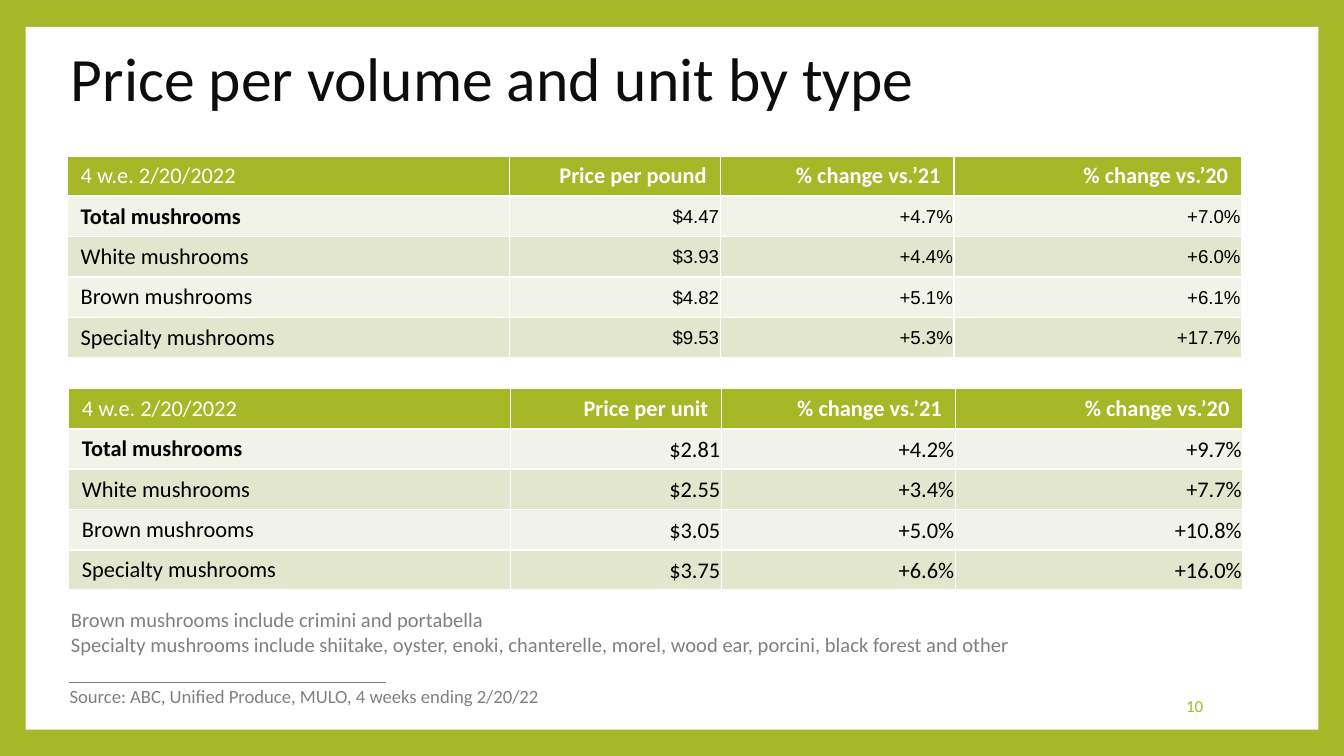
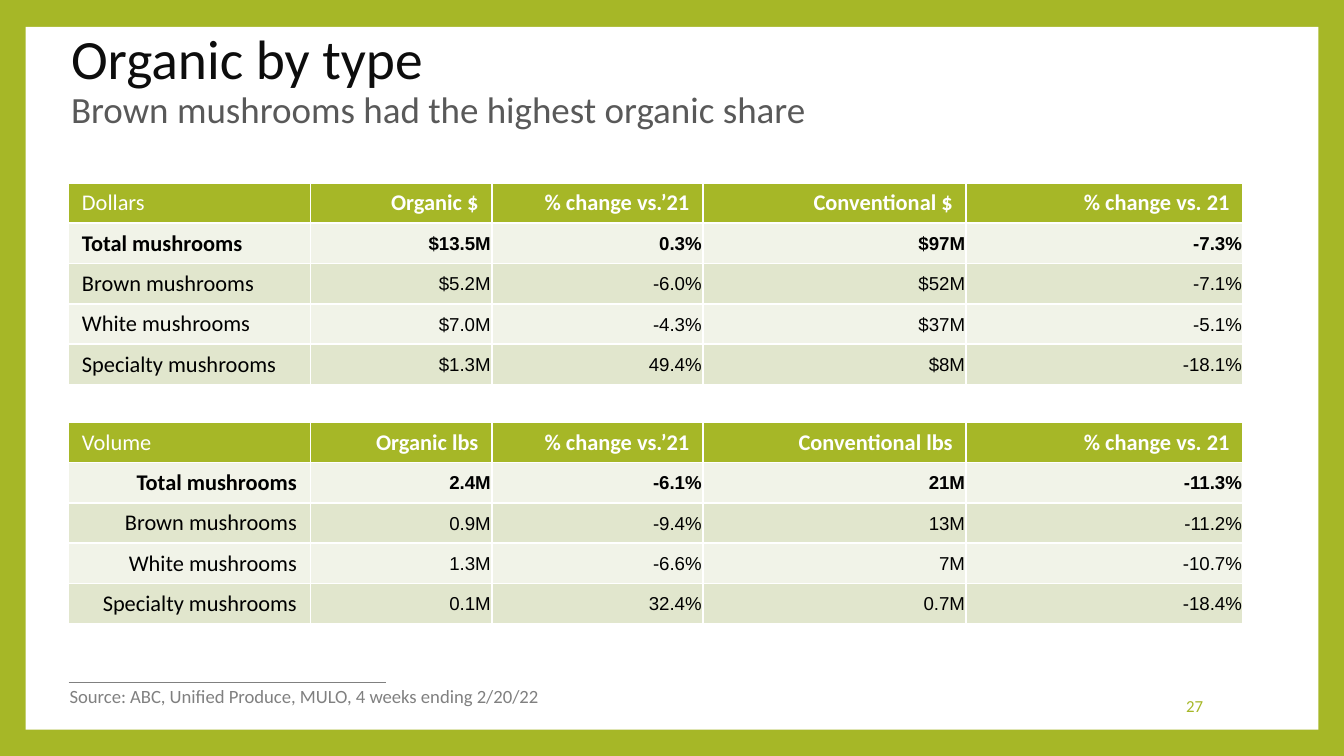
from lxml import etree
from pptx import Presentation
from pptx.dml.color import RGBColor
from pptx.enum.shapes import MSO_CONNECTOR as Connector, MSO_SHAPE as Shape
from pptx.enum.text import MSO_ANCHOR as Anchor, PP_ALIGN as Align
from pptx.oxml import parse_xml
from pptx.oxml.ns import nsdecls, qn
from pptx.util import Inches, Pt

GREEN, WHITE, GRAY, BLACK = "A6B727", "FFFFFF", "808080", "000000"
BANDS = ["F1F3E8", "E1E6CD"]
ROW_HEIGHT = 0.3
SOURCE = "Source: ABC, Unified Produce, MULO, 4 weeks ending 2/20/22"
TIGHT = {"margin_left": Inches(0.01), "margin_right": Inches(0.01),
         "margin_top": Inches(0.01), "margin_bottom": 0}


def rgb(color):
    return RGBColor.from_string(color)


def add_span(para, text, size, color, name="Calibri", bold=False):
    span = para.add_run()
    span.text = text
    for key, value in {"size": Pt(size), "name": name, "bold": bold}.items():
        setattr(span.font, key, value)
    span.font.color.rgb = rgb(color)


price_columns = [3.29, 1.57, 1.74, 2.14]
organic_columns = [1.8, 1.35, 1.57, 1.96, 2.06]

slides = [
    {
        "number": "10",
        "title": [("Price per volume and unit by type", 33, "0D0D0D")],
        "title_width": 8.53,
        "notes": ["Brown mushrooms include crimini and portabella",
                  "Specialty mushrooms include shiitake, oyster, enoki, chanterelle, "
                  "morel, wood ear, porcini, black forest and other"],
        "tables": [
            {"left": 0.5, "top": 1.16, "columns": price_columns, "values": ("Arial", 10),
             "bold_total": False, "labels": Align.LEFT, "rows": [
                ["4 w.e. 2/20/2022", "Price per pound", "% change vs.’21", "% change vs.’20"],
                ["Total mushrooms", "$4.47", "+4.7%", "+7.0%"],
                ["White mushrooms", "$3.93", "+4.4%", "+6.0%"],
                ["Brown mushrooms", "$4.82", "+5.1%", "+6.1%"],
                ["Specialty mushrooms", "$9.53", "+5.3%", "+17.7%"]]},
            {"left": 0.51, "top": 2.89, "columns": price_columns, "values": ("Calibri", 12),
             "bold_total": False, "labels": Align.LEFT, "rows": [
                ["4 w.e. 2/20/2022", "Price per unit", "% change vs.’21", "% change vs.’20"],
                ["Total mushrooms", "$2.81", "+4.2%", "+9.7%"],
                ["White mushrooms", "$2.55", "+3.4%", "+7.7%"],
                ["Brown mushrooms", "$3.05", "+5.0%", "+10.8%"],
                ["Specialty mushrooms", "$3.75", "+6.6%", "+16.0%"]]},
        ],
    },
    {
        "number": "27",
        "title": [("Organic by type", 29.7, "0D0D0D"),
                  ("Brown mushrooms had the highest organic share", 19.8, "595959")],
        "title_width": 9.45,
        "notes": [],
        "tables": [
            {"left": 0.51, "top": 1.36, "columns": organic_columns, "values": ("Arial", 10),
             "bold_total": True, "labels": Align.LEFT, "rows": [
                ["Dollars", "Organic $", "% change vs.’21", "Conventional $", "% change vs. 21"],
                ["Total mushrooms", "$13.5M", "0.3%", "$97M", "-7.3%"],
                ["Brown mushrooms", "$5.2M", "-6.0%", "$52M", "-7.1%"],
                ["White mushrooms", "$7.0M", "-4.3%", "$37M", "-5.1%"],
                ["Specialty mushrooms", "$1.3M", "49.4%", "$8M", "-18.1%"]]},
            {"left": 0.51, "top": 3.14, "columns": organic_columns, "values": ("Arial", 10),
             "bold_total": True, "labels": Align.RIGHT, "rows": [
                ["Volume", "Organic lbs", "% change vs.’21", "Conventional lbs", "% change vs. 21"],
                ["Total mushrooms", "2.4M", "-6.1%", "21M", "-11.3%"],
                ["Brown mushrooms", "0.9M", "-9.4%", "13M", "-11.2%"],
                ["White mushrooms", "1.3M", "-6.6%", "7M", "-10.7%"],
                ["Specialty mushrooms", "0.1M", "32.4%", "0.7M", "-18.4%"]]},
        ],
    },
]

deck = Presentation()
deck.slide_width = Inches(10)
deck.slide_height = deck.slide_width * 9 // 16

for content in slides:
    page = deck.slides.add_slide(deck.slide_layouts[6])
    page.background.fill.solid()
    page.background.fill.fore_color.rgb = rgb(GREEN)

    panel = page.shapes.add_shape(Shape.RECTANGLE, Inches(0.19), Inches(0.2),
                                  Inches(9.62), Inches(5.23))
    panel.shadow.inherit = False
    panel.fill.solid()
    panel.fill.fore_color.rgb = rgb(WHITE)
    panel.line.fill.background()

    rule = page.shapes.add_connector(Connector.STRAIGHT, Inches(0.51), Inches(5.08),
                                     Inches(2.87), Inches(5.08))
    rule.line.color.rgb = rgb(GRAY)
    rule.line.width = Pt(0.79)
    etree.SubElement(rule._element.spPr, qn("a:effectLst"))

    title_place = (0.43, 0.21, content["title_width"], 0.79)
    notes = [[(note, 11, GRAY)] for note in content["notes"]]
    text_boxes = [
        (title_place, [content["title"]], Anchor.MIDDLE, Align.LEFT, 0.9),
        ((7.65, 5.1, 1.4, 0.3), [[(content["number"], 9, GREEN)]], Anchor.MIDDLE, Align.RIGHT, 1.0),
        ((0.42, 5.05, 3.84, 0.27), [[(SOURCE, 10, GRAY)]], Anchor.TOP, Align.LEFT, 1.0),
        ((0.43, 4.47, 7.36, 0.47), notes, Anchor.TOP, Align.LEFT, 1.0),
    ]
    for place, paragraphs, anchor, align, spacing in text_boxes:
        if not paragraphs:
            continue
        box = page.shapes.add_textbox(*map(Inches, place))
        frame = box.text_frame
        frame.word_wrap = True
        frame.vertical_anchor = anchor
        for index, lines in enumerate(paragraphs):
            para = frame.add_paragraph() if index else frame.paragraphs[0]
            para.alignment, para.line_spacing = align, spacing
            for position, line in enumerate(lines):
                if position:
                    para.add_line_break()
                add_span(para, *line)

    for data in content["tables"]:
        rows, columns = data["rows"], data["columns"]
        table = page.shapes.add_table(
            len(rows), len(columns), Inches(data["left"]), Inches(data["top"]),
            Inches(sum(columns)), Inches(ROW_HEIGHT * len(rows))).table
        for column, width in zip(table.columns, columns):
            column.width = Inches(width)
        for r, row in enumerate(rows):
            table.rows[r].height = Inches(ROW_HEIGHT)
            for c, text in enumerate(row):
                cell = table.cell(r, c)
                is_header, is_label = r == 0, c == 0
                for side in ("lnL", "lnR", "lnT", "lnB"):
                    cell._tc.get_or_add_tcPr().append(parse_xml(
                        f'<a:{side} {nsdecls("a")} w="12700"><a:solidFill>'
                        f'<a:srgbClr val="{WHITE}"/></a:solidFill></a:{side}>'))
                cell.fill.solid()
                cell.fill.fore_color.rgb = rgb(GREEN if is_header else BANDS[(r - 1) % 2])
                cell.vertical_anchor = Anchor.TOP if is_header else Anchor.MIDDLE
                name, size = "Calibri", 12
                if not is_header and not is_label:
                    name, size = data["values"]
                    for key, value in TIGHT.items():
                        setattr(cell, key, value)
                if is_header:
                    bold = not is_label
                else:
                    bold = r == 1 and (is_label or data["bold_total"])
                para = cell.text_frame.paragraphs[0]
                para.alignment = Align.RIGHT
                if is_label:
                    para.alignment = Align.LEFT if is_header else data["labels"]
                add_span(para, text, size, WHITE if is_header else BLACK, name, bold)

deck.save("out.pptx")
